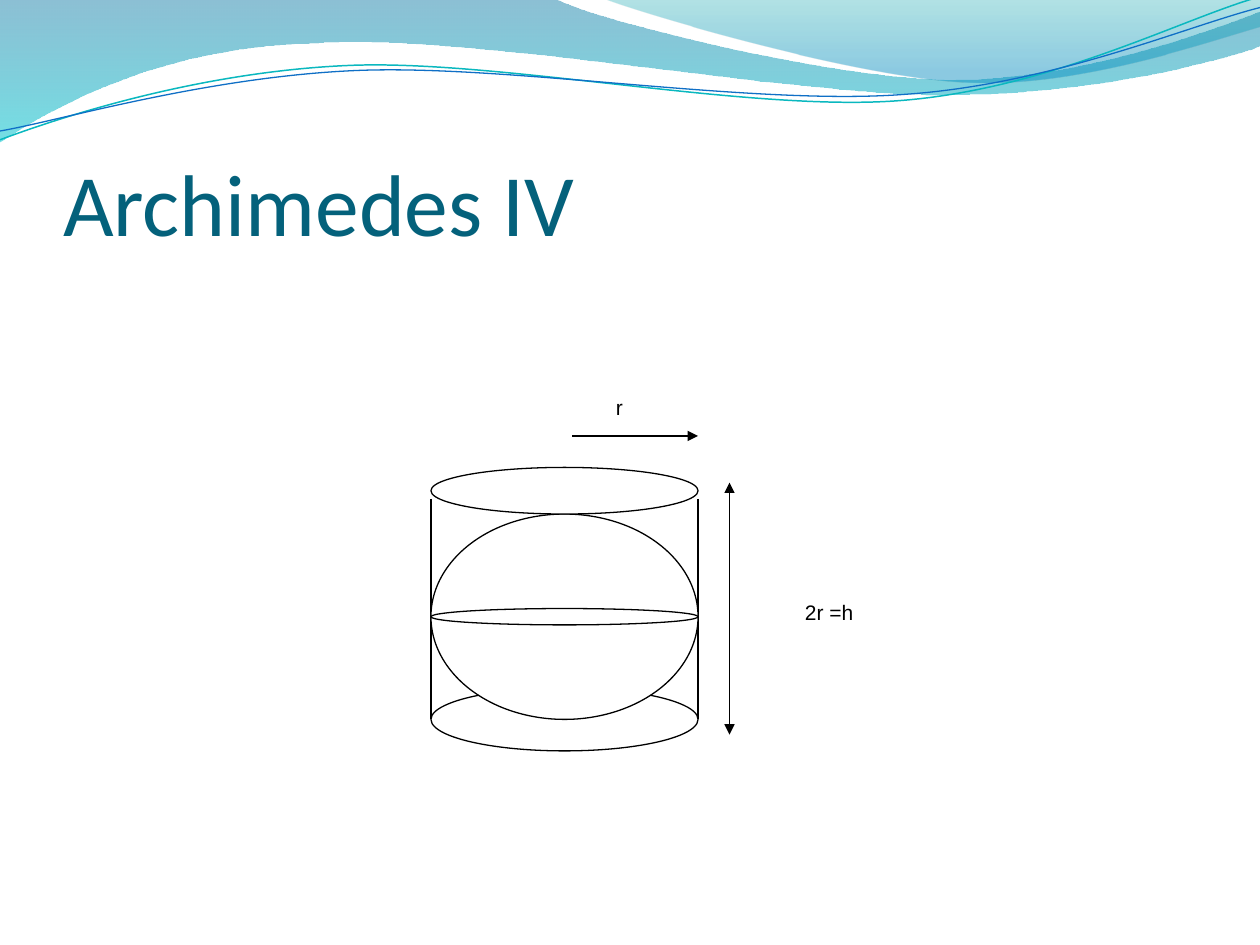
import pptx
import pptx.dml.color
import pptx.enum.shapes
import pptx.enum.text
import pptx.oxml
import pptx.oxml.ns
import pptx.util
from pptx.dml.color import RGBColor

WHITE = RGBColor(0xFF, 0xFF, 0xFF)
BLACK = RGBColor(0x00, 0x00, 0x00)
TITLE_TEAL = RGBColor(0x04, 0x61, 0x7B)
DEEP_BLUE = RGBColor(0x00, 0x74, 0xA1)
CYAN = RGBColor(0x00, 0xC6, 0xCF)
SEA_GREEN = RGBColor(0x00, 0xA1, 0xA9)
SKY_BLUE = RGBColor(0x00, 0x8B, 0xBF)
LINE_TEAL = RGBColor(0x0A, 0xB8, 0xBF)
LINE_BLUE = RGBColor(0x0F, 0x6F, 0xC6)

# Cylinder measures in inches
LEFT, RIGHT = 3.42, 5.54
DIAMETER = RIGHT - LEFT
BASE_Y = 5.71

# Waves: a start point, then lines (one point) and Bezier curves (three points)
LONG_WAVE = [
    [(0, 0)], [(4.4, -0.01)],
    [(4.76, 0.17), (6.64, 0.63), (7.58, 0.63)],
    [(8.53, 0.63), (9.58, 0.26), (10, 0.09)],
    [(10.01, 0.36)],
    [(9.83, 0.44), (8.7, 0.76), (7.46, 0.75)],
    [(6.22, 0.75), (3.82, 0.28), (2.57, 0.34)],
    [(1.29, 0.36), (0.46, 0.83), (-0.01, 1.13)],
]
SHORT_WAVE = [
    [(4.79, -0.01)],
    [(5.09, 0.11), (6.82, 0.62), (7.69, 0.65)],
    [(8.56, 0.69), (9.61, 0.32), (10, 0.21)],
    [(10, 0)],
]
TEAL_STROKE = [
    [(0, 1.11)],
    [(0.48, 0.93), (1.58, 0.57), (2.77, 0.52)],
    [(3.95, 0.47), (5.93, 0.89), (7.13, 0.8)],
    [(8.33, 0.71), (9.38, 0.15), (9.98, -0.02)],
]
BLUE_STROKE = [
    [(0, 1.04)],
    [(0.47, 0.96), (1.64, 0.61), (2.83, 0.56)],
    [(4.03, 0.51), (5.97, 0.84), (7.17, 0.75)],
    [(8.36, 0.67), (9.41, 0.21), (10, 0.06)],
]


def inches(*values):
    return [pptx.util.Inches(value) for value in values]


def add_xml(parent, tag, **attributes):
    element = pptx.oxml.parse_xml(f"<a:{tag} {pptx.oxml.ns.nsdecls('a')}/>")
    for name, value in attributes.items():
        element.set(name, str(value))
    parent.append(element)
    return element


def write_text(shape, text, *, font, size, color, anchor, margins):
    frame = shape.text_frame
    frame.word_wrap = True
    frame.auto_size = pptx.enum.text.MSO_AUTO_SIZE.NONE
    frame.vertical_anchor = anchor
    (frame.margin_left, frame.margin_top,
     frame.margin_right, frame.margin_bottom) = inches(*margins)
    paragraph = frame.paragraphs[0]
    paragraph.alignment = pptx.enum.text.PP_ALIGN.LEFT
    run = paragraph.add_run()
    run.text = text
    run.font.name = font
    run.font.size = pptx.util.Pt(size)
    run.font.color.rgb = color


def add_curve(shapes, segments, closed):
    """Build an outline, then join each three-point segment into one curve."""
    points = [inches(*point) for segment in segments for point in segment]
    builder = shapes.build_freeform(*points[0])
    builder.add_line_segments(points[1:], close=closed)
    shape = builder.convert_to_shape()
    shape.shadow.inherit = False
    lines = iter(list(shape._element.spPr.iter(pptx.oxml.ns.qn("a:lnTo"))))
    for segment in segments[1:]:
        parts = [next(lines) for _ in segment]
        if len(parts) == 3:
            curve = add_xml(parts[0].getparent(), "cubicBezTo")
            parts[0].addprevious(curve)
            for part in parts:
                curve.append(part[0])
                part.getparent().remove(part)
    return shape


def add_wave(shapes, segments, stops):
    """Add a vertical gradient band; stops are (position, colour, opacity %)."""
    shape = add_curve(shapes, segments, True)
    shape.line.fill.background()
    shape.fill.gradient()
    shape.fill.gradient_angle = 270
    for stop, (position, color, _) in zip(shape.fill.gradient_stops, stops):
        stop.position = position
        stop.color.rgb = color
    colors = shape._element.spPr.iter(pptx.oxml.ns.qn("a:srgbClr"))
    for element, (_, _, opacity) in zip(list(colors), stops):
        add_xml(element, "alpha", val=opacity * 1000)


def add_stroke(shapes, segments, color, width):
    shape = add_curve(shapes, segments, False)
    shape.fill.background()
    shape.line.color.rgb = color
    shape.line.width = pptx.util.Pt(width)


def add_ellipse(shapes, top, height):
    shape = shapes.add_shape(
        pptx.enum.shapes.MSO_SHAPE.OVAL, *inches(LEFT, top, DIAMETER, height))
    shape.shadow.inherit = False
    shape.fill.solid()
    shape.fill.fore_color.rgb = WHITE
    shape.line.color.rgb = BLACK
    shape.line.width = pptx.util.Pt(0.75)


def add_line(shapes, start, end, arrowheads=()):
    line = shapes.add_connector(
        pptx.enum.shapes.MSO_CONNECTOR.STRAIGHT, *inches(*start, *end))
    line.line.color.rgb = BLACK
    line.line.width = pptx.util.Pt(0.75)
    for arrowhead in arrowheads:
        add_xml(line.line._get_or_add_ln(), arrowhead, type="triangle")
    add_xml(line._element.spPr, "effectLst")


def add_label(shapes, text, left, top, width, height):
    shape = shapes.add_shape(
        pptx.enum.shapes.MSO_SHAPE.RECTANGLE, *inches(left, top, width, height))
    shape.shadow.inherit = False
    shape.fill.solid()
    shape.fill.fore_color.rgb = WHITE
    shape.line.fill.background()
    write_text(shape, text, font="Arial", size=12, color=BLACK,
               anchor=pptx.enum.text.MSO_ANCHOR.TOP, margins=(0.1, 0.05, 0.1, 0.05))


def add_title(slide, text):
    title = slide.shapes.title
    title.left, title.top, title.width, title.height = inches(0.5, 0.77, 9.08, 1.25)
    write_text(title, text, font="Calibri", size=50, color=TITLE_TEAL,
               anchor=pptx.enum.text.MSO_ANCHOR.BOTTOM, margins=(0, 0.05, 0, 0))


def main():
    presentation = pptx.Presentation()
    presentation.slide_width, presentation.slide_height = inches(10, 7.5)
    slide = presentation.slides.add_slide(presentation.slide_layouts[5])

    # Header waves
    add_wave(slide.shapes, LONG_WAVE, [(0, DEEP_BLUE, 45), (1, CYAN, 55)])
    add_wave(slide.shapes, SHORT_WAVE, [(0, SEA_GREEN, 30), (0.8, SKY_BLUE, 45)])
    strokes = slide.shapes.add_group_shape().shapes
    add_stroke(strokes, TEAL_STROKE, LINE_TEAL, 0.85)
    add_stroke(strokes, BLUE_STROKE, LINE_BLUE, 0.75)

    add_title(slide, "Archimedes IV")

    # Cylinder base and sides
    figure = slide.shapes.add_group_shape().shapes
    add_ellipse(figure, BASE_Y - 0.25, 0.5)
    for x in (LEFT, RIGHT):
        add_line(figure, (x, 3.96), (x, BASE_Y))

    # Sphere, its equator, and the cylinder top
    for top, height in ((4.08, 1.63), (4.83, 0.13), (3.71, 0.37)):
        add_ellipse(figure, top, height)

    # Height and radius
    add_label(figure, "2r =h", 6.29, 4.71, 0.62, 0.38)
    add_line(figure, (5.79, 3.83), (5.79, 5.83), ("headEnd", "tailEnd"))
    add_line(figure, (RIGHT - 1, 3.46), (RIGHT, 3.46), ("tailEnd",))
    add_label(figure, "r", 4.79, 3.08, 0.25, 0.25)

    presentation.save("out.pptx")


if __name__ == "__main__":
    main()
